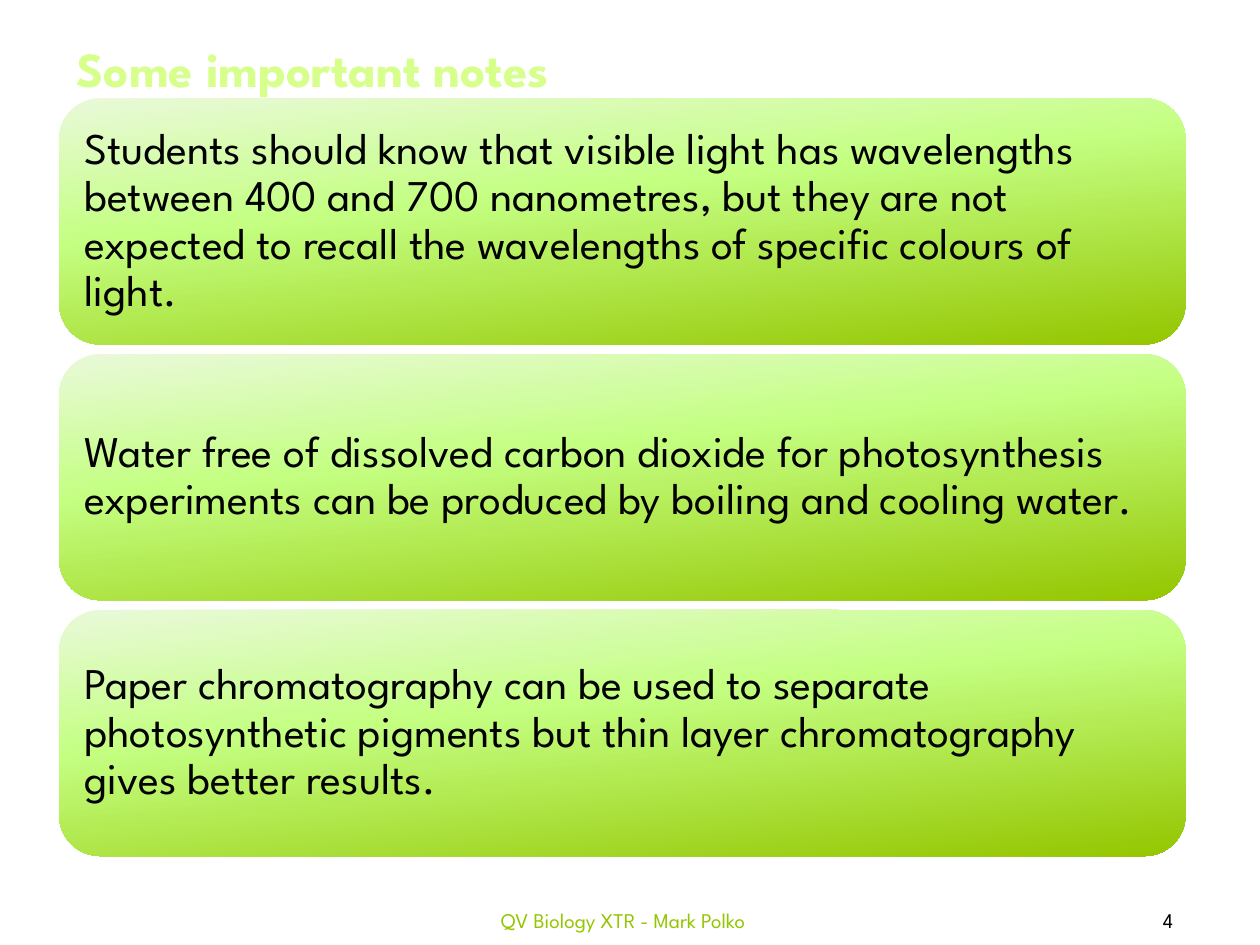
from dataclasses import dataclass

from lxml.etree import SubElement
from pptx import Presentation
from pptx.dml.color import RGBColor
from pptx.enum.shapes import MSO_SHAPE as Shape
from pptx.enum.text import MSO_ANCHOR as Anchor, MSO_AUTO_SIZE as AutoSize, PP_ALIGN as Align
from pptx.oxml.ns import qn
from pptx.util import Pt

FONT = "League Spartan"
BLACK, GREEN, PALE_LIME = "000000", "94C600", "D6FF8C"
CARD_STOPS = [(0, "EAF9DA"), (40, "C4FF82"), (100, GREEN)]
CARD_ANGLE = 84
FIRST_CARD_TOP, CARD_PITCH = 56.2, 146.2


@dataclass
class Box:
    """Position and size in points."""
    left: float
    top: float
    width: float
    height: float

    def lengths(self) -> list:
        return [Pt(v) for v in (self.left, self.top, self.width, self.height)]


NOTES = [
    "Students should know that visible light has wavelengths between 400 and 700 "
    "nanometres, but they are not expected to recall the wavelengths of specific "
    "colours of light.",
    "Water free of dissolved carbon dioxide for photosynthesis experiments can be "
    "produced by boiling and cooling water.",
    "Paper chromatography can be used to separate photosynthetic pigments but thin "
    "layer chromatography gives better results.",
]


def rgb(color: str) -> RGBColor:
    return RGBColor.from_string(color)


def write(shape, text: str, *, size: float, color: str = BLACK, bold: bool = False,
          align=Align.LEFT, anchor=Anchor.MIDDLE, spacing: float = 1.0,
          margin: float | None = None) -> None:
    frame = shape.text_frame
    frame.word_wrap = True
    frame.vertical_anchor = anchor
    if margin is not None:
        frame.margin_left = frame.margin_right = Pt(margin)
        frame.margin_top = frame.margin_bottom = Pt(margin)
    paragraph = frame.paragraphs[0]
    paragraph.alignment = align
    paragraph.line_spacing = spacing
    run = paragraph.add_run()
    run.text = text
    run.font.name = FONT
    run.font.size = Pt(size)
    run.font.bold = bold
    run.font.color.rgb = rgb(color)


def fill_gradient(shape, stops: list[tuple[int, str]], angle: float) -> None:
    """Fill with percent/colour stops along a clockwise angle."""
    shape.fill.gradient()
    shape.fill.gradient_angle = 360 - angle
    stop_list = shape.element.spPr.find(".//" + qn("a:gsLst"))
    for default_stop in list(stop_list):
        stop_list.remove(default_stop)
    for percent, color in stops:
        stop = SubElement(stop_list, qn("a:gs"), pos=str(percent * 1000))
        SubElement(stop, qn("a:srgbClr"), val=color)


def add_card(slide, box: Box, text: str) -> None:
    card = slide.shapes.add_shape(Shape.ROUNDED_RECTANGLE, *box.lengths())
    card.shadow.inherit = False
    card.line.fill.background()
    fill_gradient(card, CARD_STOPS, CARD_ANGLE)
    write(card, text, size=25, spacing=0.9, margin=7.6)


def add_label(slide, box: Box, text: str, **text_format):
    label = slide.shapes.add_textbox(*box.lengths())
    write(label, text, **text_format)
    return label


def main() -> None:
    deck = Presentation()
    deck.slide_width, deck.slide_height = Pt(720), Pt(540)
    slide = deck.slides.add_slide(deck.slide_layouts[6])

    add_label(slide, Box(614.9, 511.2, 105.1, 28.8), "4", size=12, align=Align.CENTER)
    add_label(slide, Box(218.2, 511.2, 275.8, 28.8), "QV Biology XTR - Mark Polko",
              size=12, color=GREEN, align=Align.CENTER)
    for index, note in enumerate(NOTES):
        add_card(slide, Box(33.8, FIRST_CARD_TOP + index * CARD_PITCH, 643.7, 140.6), note)
    heading = add_label(slide, Box(36.7, 18.7, 345.6, 41), "Some important notes",
                        size=28, color=PALE_LIME, bold=True, anchor=Anchor.TOP)
    heading.text_frame.auto_size = AutoSize.SHAPE_TO_FIT_TEXT

    deck.save("out.pptx")


if __name__ == "__main__":
    main()
